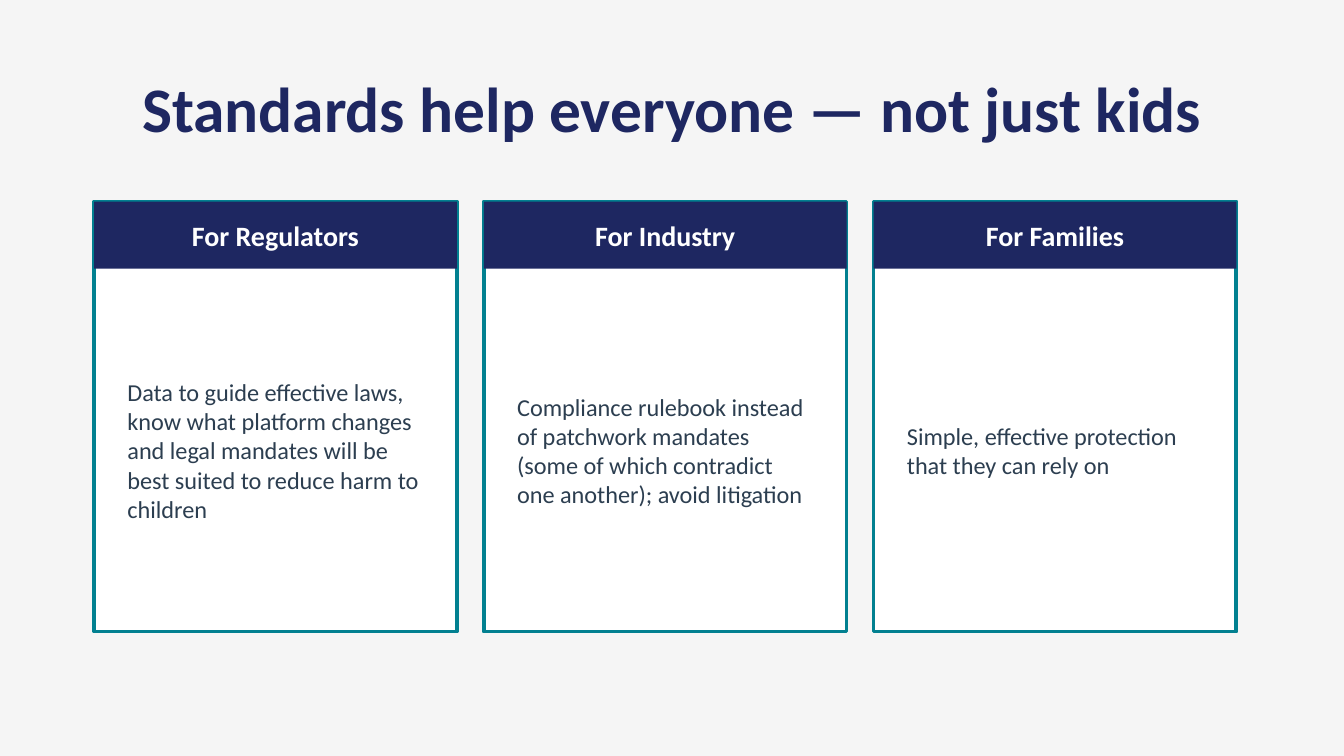
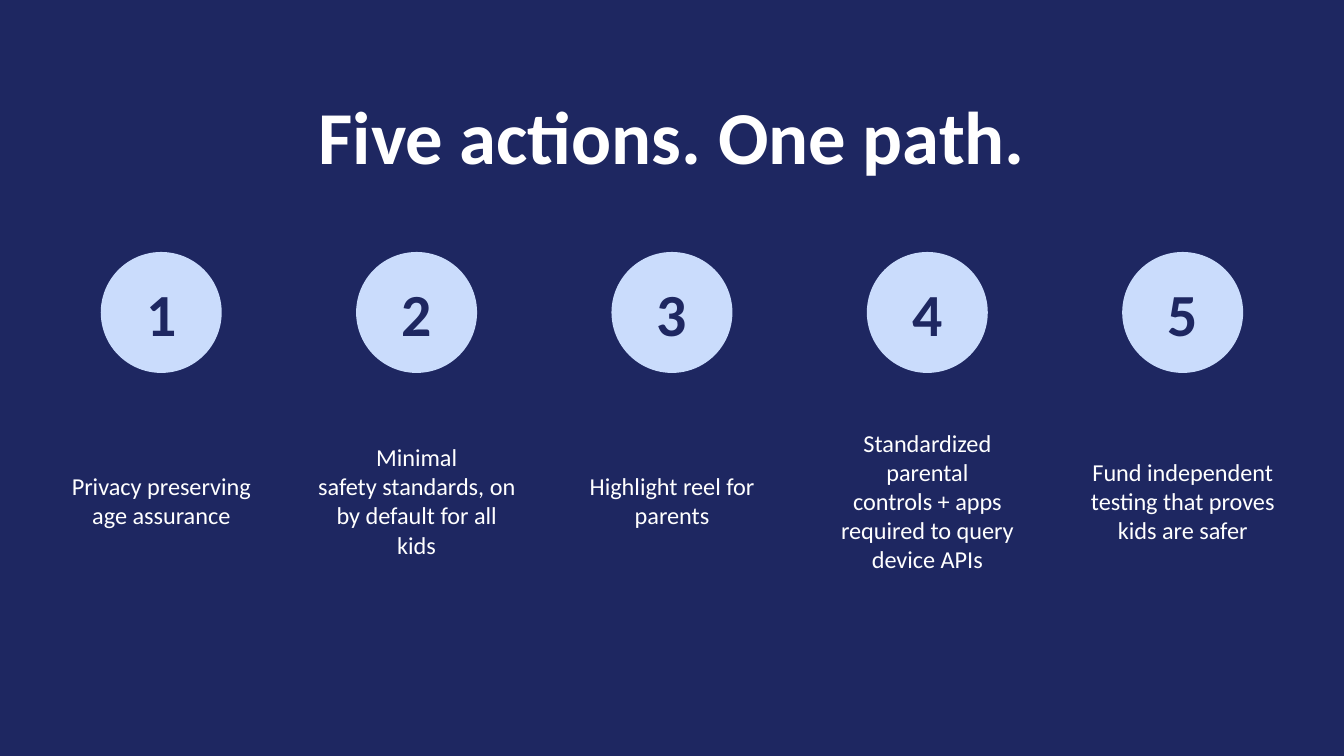
from dataclasses import dataclass

from pptx import Presentation
from pptx.dml.color import RGBColor
from pptx.enum.shapes import MSO_SHAPE
from pptx.enum.text import MSO_ANCHOR, PP_ALIGN
from pptx.shapes.autoshape import Shape
from pptx.slide import Slide
from pptx.util import Pt

RECTANGLE = MSO_SHAPE.RECTANGLE
OVAL = MSO_SHAPE.OVAL
LEFT = PP_ALIGN.LEFT
CENTER = PP_ALIGN.CENTER
MIDDLE = MSO_ANCHOR.MIDDLE

FONT = "Calibri"
NAVY = "1E2761"
TEAL = "028090"
ICE = "CADCFC"
SLATE = "2C3E50"
PAPER = "F5F5F5"
WHITE = "FFFFFF"

SLIDE_WIDTH, SLIDE_HEIGHT = 720, 405
BODY_SIZE = 13

CARD_LEFT, CARD_TOP = 50.4, 108
CARD_WIDTH, CARD_HEIGHT = 194.4, 230.4
CARD_PITCH = 208.8
BAND_HEIGHT = 36
CARD_PADDING = 10.8

STEP_CENTER, STEP_PITCH = 86.4, 136.8
CIRCLE_TOP, CIRCLE_SIZE = 135, 64.8
NUMBER_HEIGHT = 43.2
LABEL_TOP, LABEL_WIDTH, LABEL_HEIGHT = 214.2, 122.4, 108


@dataclass(frozen=True)
class Area:
    left: float
    top: float
    width: float
    height: float

    def lengths(self) -> tuple[Pt, Pt, Pt, Pt]:
        return Pt(self.left), Pt(self.top), Pt(self.width), Pt(self.height)


@dataclass(frozen=True)
class Card:
    heading: str
    body: str


@dataclass(frozen=True)
class Step:
    number: int
    label: str


CARDS = [
    Card("For Regulators",
         "Data to guide effective laws, know what platform changes and legal "
         "mandates will be best suited to reduce harm to children"),
    Card("For Industry",
         "Compliance rulebook instead of patchwork mandates "
         "(some of which contradict one another); avoid litigation"),
    Card("For Families", "Simple, effective protection that they can rely on"),
]

STEPS = [
    Step(1, "Privacy preserving age assurance"),
    Step(2, "Minimal\nsafety standards, on by default for all kids"),
    Step(3, "Highlight reel for parents"),
    Step(4, "Standardized parental\ncontrols + apps required to query device APIs"),
    Step(5, "Fund independent\ntesting that proves kids are safer"),
]


def color(value: str) -> RGBColor:
    return RGBColor.from_string(value)


def add_text(page: Slide, area: Area, text: str, *, size: float, ink: str,
             bold: bool = False, align: PP_ALIGN = CENTER) -> Shape:
    box = page.shapes.add_textbox(*area.lengths())
    frame = box.text_frame
    frame.word_wrap = True
    frame.vertical_anchor = MIDDLE
    frame.text = text
    for para in frame.paragraphs:
        para.alignment = align
        for span in para.runs:
            span.font.name = FONT
            span.font.size = Pt(size)
            span.font.bold = bold
            span.font.color.rgb = color(ink)
    return box


def add_block(page: Slide, kind: MSO_SHAPE, area: Area, fill: str,
              line: str | None = None) -> Shape:
    block = page.shapes.add_shape(kind, *area.lengths())
    block.shadow.inherit = False
    block.fill.solid()
    block.fill.fore_color.rgb = color(fill)
    if line:
        block.line.color.rgb = color(line)
        block.line.width = Pt(2)
    else:
        block.line.fill.background()
    return block


def add_page(deck: Presentation, background: str, title: str, *, top: float,
             height: float, size: float, ink: str) -> Slide:
    page = deck.slides.add_slide(deck.slide_layouts[6])
    page.background.fill.solid()
    page.background.fill.fore_color.rgb = color(background)
    add_text(page, Area(36, top, SLIDE_WIDTH - 72, height), title,
             size=size, ink=ink, bold=True)
    return page


def add_card(page: Slide, card: Card, left: float) -> None:
    add_block(page, RECTANGLE, Area(left, CARD_TOP, CARD_WIDTH, CARD_HEIGHT), WHITE, TEAL)
    add_block(page, RECTANGLE, Area(left, CARD_TOP, CARD_WIDTH, BAND_HEIGHT), NAVY)
    add_text(page, Area(left, CARD_TOP + 7.2, CARD_WIDTH, 21.6), card.heading,
             size=15, ink=WHITE, bold=True)
    body = Area(left + CARD_PADDING, CARD_TOP + BAND_HEIGHT + 14.4,
                CARD_WIDTH - 2 * CARD_PADDING, 165.6)
    add_text(page, body, card.body, size=BODY_SIZE, ink=SLATE, align=LEFT)


def add_step(page: Slide, step: Step, center: float) -> None:
    left = center - CIRCLE_SIZE / 2
    number_top = CIRCLE_TOP + (CIRCLE_SIZE - NUMBER_HEIGHT) / 2
    add_block(page, OVAL, Area(left, CIRCLE_TOP, CIRCLE_SIZE, CIRCLE_SIZE), ICE)
    add_text(page, Area(left, number_top, CIRCLE_SIZE, NUMBER_HEIGHT),
             str(step.number), size=32, ink=NAVY, bold=True)
    label = Area(center - LABEL_WIDTH / 2, LABEL_TOP, LABEL_WIDTH, LABEL_HEIGHT)
    add_text(page, label, step.label, size=BODY_SIZE, ink=WHITE)


def main() -> None:
    deck = Presentation()
    deck.slide_width = Pt(SLIDE_WIDTH)
    deck.slide_height = Pt(SLIDE_HEIGHT)

    benefits = add_page(deck, PAPER, "Standards help everyone — not just kids",
                        top=36, height=43.2, size=34, ink=NAVY)
    for index, card in enumerate(CARDS):
        add_card(benefits, card, CARD_LEFT + index * CARD_PITCH)

    actions = add_page(deck, NAVY, "Five actions. One path.",
                       top=43.2, height=57.6, size=40, ink=WHITE)
    for index, step in enumerate(STEPS):
        add_step(actions, step, STEP_CENTER + index * STEP_PITCH)

    deck.save("out.pptx")


if __name__ == "__main__":
    main()
